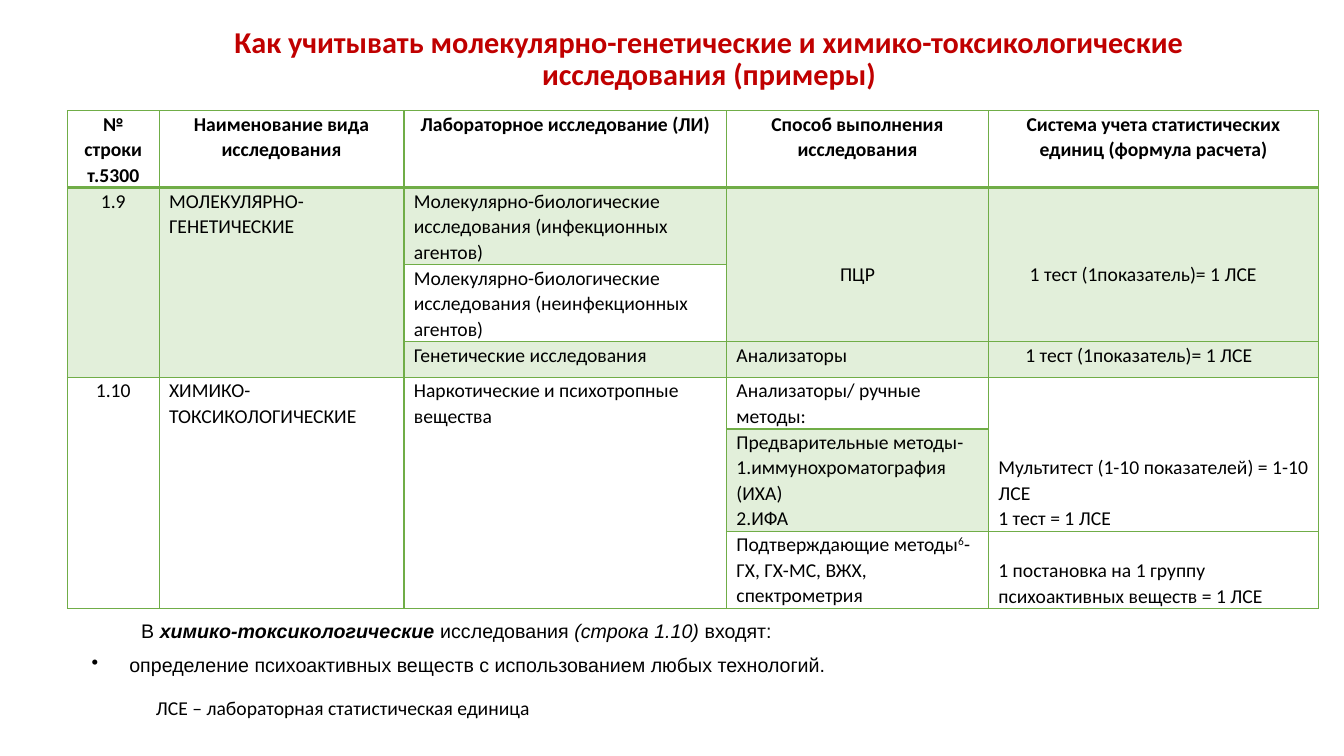
from dataclasses import dataclass

import pptx
import pptx.dml.color
import pptx.enum.text
import pptx.oxml
import pptx.oxml.ns
import pptx.util
from pptx.util import Cm

COLOURS = {"title": "C00000", "text": "000000", "line": "70AD47",
           "tint": "E2EFDA", "plain": "FFFFFF"}
ALIGN = pptx.enum.text.PP_ALIGN
ANCHOR = pptx.enum.text.MSO_ANCHOR

COLUMN_WIDTHS = [2.31, 6.17, 8.13, 6.6, 8.32]
ROW_HEIGHTS = [1.94, 1.94, 1.94, 0.9, 1.3, 2.58, 1.94]


@dataclass
class Span:
    text: str
    bold: bool = False
    italic: bool = False
    raised: bool = False


@dataclass
class Entry:
    row: int
    column: int
    lines: list[str | list[Span]]
    rows: int = 1
    tinted: bool = False
    centred: bool = False
    bold: bool = False
    top: float = 0
    left: float = 0.25
    after: float = 0


HEADINGS = ["№ строки т.5300", "Наименование вида исследования",
            "Лабораторное исследование (ЛИ)", "Способ выполнения исследования",
            "Система учета статистических единиц (формула расчета)"]

ENTRIES = [Entry(0, column, [heading], centred=True, bold=True)
           for column, heading in enumerate(HEADINGS)] + [
    # Line 1.9
    Entry(1, 0, ["1.9"], rows=3, tinted=True, centred=True),
    Entry(1, 1, ["МОЛЕКУЛЯРНО-ГЕНЕТИЧЕСКИЕ"], rows=3, tinted=True),
    Entry(1, 2, ["Молекулярно-биологические исследования (инфекционных агентов)"],
          tinted=True),
    Entry(1, 3, ["ПЦР"], rows=2, tinted=True, centred=True, top=1.85),
    Entry(1, 4, ["1 тест (1показатель)= 1 ЛСЕ"], rows=2, tinted=True, top=1.85, left=1.04),
    Entry(2, 2, ["Молекулярно-биологические исследования (неинфекционных агентов)"]),
    Entry(3, 2, ["Генетические исследования"], tinted=True),
    Entry(3, 3, ["Анализаторы"], tinted=True),
    Entry(3, 4, ["1 тест (1показатель)= 1 ЛСЕ"], tinted=True, left=0.93),
    # Line 1.10
    Entry(4, 0, ["1.10"], rows=3, centred=True),
    Entry(4, 1, ["ХИМИКО-ТОКСИКОЛОГИЧЕСКИЕ"], rows=3),
    Entry(4, 2, ["Наркотические и психотропные вещества"], rows=3),
    Entry(4, 3, ["Анализаторы/ ручные методы:"]),
    Entry(4, 4, ["Мультитест (1-10 показателей) = 1-10 ЛСЕ", "1 тест = 1 ЛСЕ"],
          rows=2, top=1.94),
    Entry(5, 3, ["Предварительные методы-", "1.иммунохроматография (ИХА)", "2.ИФА"],
          tinted=True),
    Entry(6, 3, [[Span("Подтверждающие методы"), Span("6", raised=True), Span("-")],
                 "ГХ, ГХ-МС, ВЖХ, спектрометрия"]),
    Entry(6, 4, ["1 постановка на 1 группу психоактивных веществ = 1 ЛСЕ"], top=0.65),
]


def rgb(name: str) -> pptx.dml.color.RGBColor:
    return pptx.dml.color.RGBColor.from_string(COLOURS[name])


def write_para(para, line: str | list[Span], font: str = "Calibri", size: float = 14,
               colour: str = "text", bold: bool = False, spacing: float = 1.07,
               align=ALIGN.LEFT) -> None:
    para.alignment = align
    para.line_spacing = spacing
    para.font.name = font
    para.font.size = pptx.util.Pt(size)
    para.font.color.rgb = rgb(colour)
    para.font.bold = bold
    for part in [Span(line, bold=bold)] if isinstance(line, str) else line:
        span = para.add_run()
        span.text = part.text
        # Runs carry the same settings so that mixed styles draw alike
        span.font.bold, span.font.italic = part.bold, part.italic
        if part.raised:
            span.font._element.set("baseline", "30000")


def add_box(page, left: float, top: float, width: float, height: float, wrap: bool = True):
    box = page.shapes.add_textbox(Cm(left), Cm(top), Cm(width), Cm(height))
    box.text_frame.word_wrap = wrap
    return box.text_frame


def set_borders(cell, row: int) -> None:
    properties = cell._tc.get_or_add_tcPr()
    for side in "LRTB":
        heavy = (row, side) in ((0, "B"), (1, "T"))
        properties.append(pptx.oxml.parse_xml(
            f'<a:ln{side} {pptx.oxml.ns.nsdecls("a")} w="{pptx.util.Pt(2 if heavy else 1)}">'
            f'<a:solidFill><a:srgbClr val="{COLOURS["line"]}"/></a:solidFill></a:ln{side}>'))


def fill_cell(table, entry: Entry) -> None:
    cell = table.cell(entry.row, entry.column)
    last = entry.row + entry.rows - 1
    if entry.rows > 1:
        cell.merge(table.cell(last, entry.column))
    for row in range(entry.row, last + 1):
        part = table.cell(row, entry.column)
        set_borders(part, row)
        part.fill.solid()
        part.fill.fore_color.rgb = rgb("tint" if entry.tinted else "plain")
    cell.margin_left, cell.margin_right = Cm(entry.left), Cm(0.25)
    cell.margin_top, cell.margin_bottom = Cm(entry.top), Cm(0)
    frame = cell.text_frame
    for index, line in enumerate(entry.lines):
        para = frame.add_paragraph() if index else frame.paragraphs[0]
        write_para(para, line, bold=entry.bold,
                   align=ALIGN.CENTER if entry.centred else ALIGN.LEFT)


def add_table(page) -> None:
    table = page.shapes.add_table(len(ROW_HEIGHTS), len(COLUMN_WIDTHS), Cm(1.7), Cm(2.79),
                                  Cm(sum(COLUMN_WIDTHS)), Cm(sum(ROW_HEIGHTS))).table
    table.first_row = table.horz_banding = False
    for column, width in zip(table.columns, COLUMN_WIDTHS):
        column.width = Cm(width)
    for row, height in zip(table.rows, ROW_HEIGHTS):
        row.height = Cm(height)
    for entry in ENTRIES:
        fill_cell(table, entry)


def add_notes_below(page) -> None:
    frame = add_box(page, 2.06, 15.44, 27.3, 1.75)
    intro, item = frame.paragraphs[0], frame.add_paragraph()
    write_para(intro, [Span("В "), Span("химико-токсикологические", bold=True, italic=True),
                       Span(" исследования "), Span("(строка 1.10)", italic=True),
                       Span(" входят:")], font="Arial", align=ALIGN.JUSTIFY)
    write_para(item, "определение психоактивных веществ с использованием любых технологий.",
               font="Arial", align=ALIGN.JUSTIFY)
    for para, margin, indent in ((intro, 0, 1.25), (item, 0.95, -0.95)):
        para.space_after = pptx.util.Pt(6)
        properties = para._p.get_or_add_pPr()
        properties.set("marL", str(Cm(margin)))
        properties.set("indent", str(Cm(indent)))
    bullet = pptx.oxml.parse_xml(f'<a:buChar {pptx.oxml.ns.nsdecls("a")} char="•"/>')
    properties.find(pptx.oxml.ns.qn("a:defRPr")).addprevious(bullet)

    legend = add_box(page, 3.68, 17.42, 10, 0.86, wrap=False)
    write_para(legend.paragraphs[0], "ЛСЕ – лабораторная статистическая единица", spacing=1.0)


def main() -> None:
    deck = pptx.Presentation()
    deck.slide_width, deck.slide_height = Cm(33.87), Cm(19.05)
    page = deck.slides.add_slide(deck.slide_layouts[6])

    # Title
    title = add_box(page, 3.58, 0.76, 28.58, 1.5)
    title.vertical_anchor = ANCHOR.MIDDLE
    write_para(title.paragraphs[0],
               "Как учитывать молекулярно-генетические и химико-токсикологические "
               "исследования (примеры)", size=21.6, colour="title", bold=True,
               spacing=0.9, align=ALIGN.CENTER)

    # Table and the notes under it
    add_table(page)
    add_notes_below(page)
    deck.save("out.pptx")


if __name__ == "__main__":
    main()
